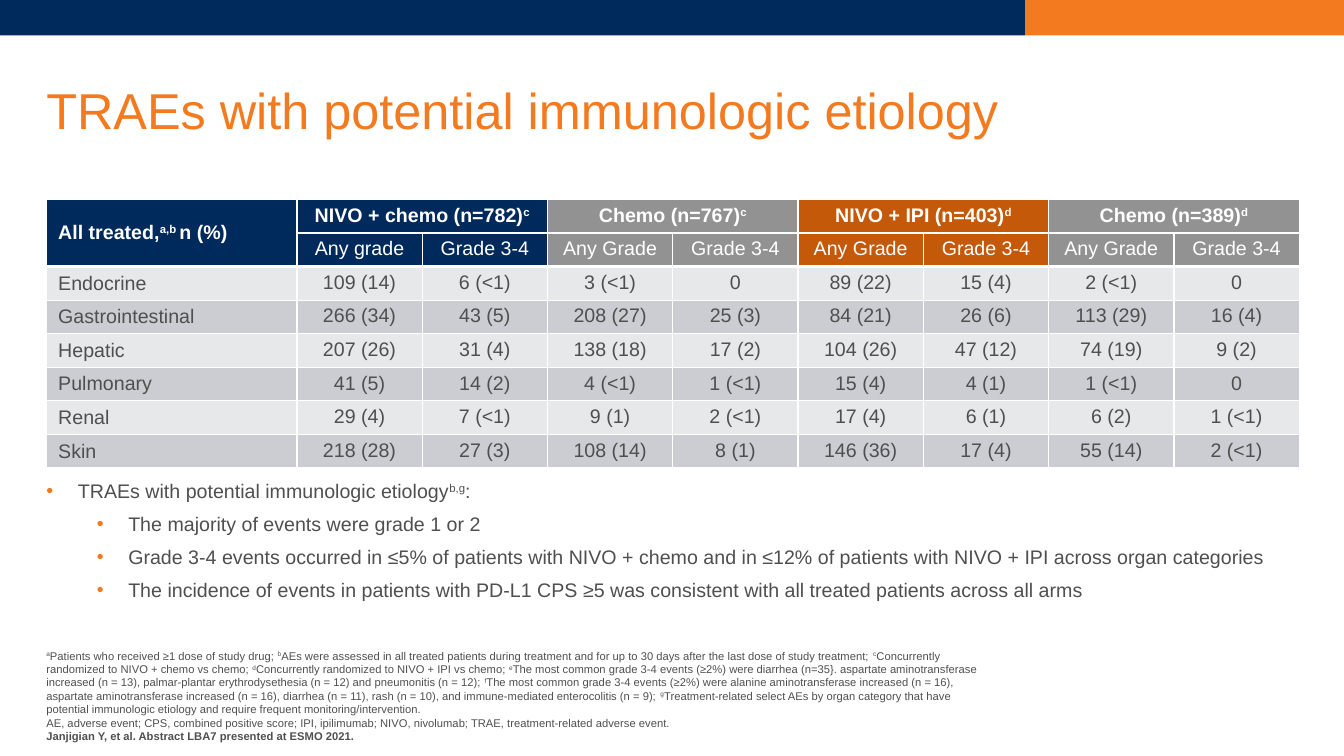
from lxml import etree
from pptx import Presentation
from pptx.dml.color import RGBColor
from pptx.enum.shapes import MSO_SHAPE
from pptx.enum.text import MSO_ANCHOR, MSO_AUTO_SIZE, PP_ALIGN
from pptx.oxml.ns import qn
from pptx.util import Pt

RECT = MSO_SHAPE.RECTANGLE
TOP, MIDDLE, BOTTOM = MSO_ANCHOR.TOP, MSO_ANCHOR.MIDDLE, MSO_ANCHOR.BOTTOM
LEFT, CENTER = PP_ALIGN.LEFT, PP_ALIGN.CENTER
NO_FIT = MSO_AUTO_SIZE.NONE
SUPER_MARK = "^"

THEME = {
    "font": "Arial",
    "navy": "002A5C", "orange": "F47A20", "rust": "C5590A", "gray": "929292",
    "text": "4E4F4E", "white": "FFFFFF", "bands": ("E7E8EA", "CCCDD2"),
    "title": 36, "body": 14, "note": 8,
}

TITLE = "TRAEs with potential immunologic etiology"
CORNER = "All treated,^a,b ^n (%)"
ARMS = [
    ("NIVO + chemo (n=782)^c^", "Any grade", "navy"),
    ("Chemo (n=767)^c^", "Any Grade", "gray"),
    ("NIVO + IPI (n=403)^d^", "Any Grade", "rust"),
    ("Chemo (n=389)^d^", "Any Grade", "gray"),
]
SEVERE = "Grade 3-4"
EVENTS = [
    ("Endocrine", "109 (14)", "6 (<1)", "3 (<1)", "0", "89 (22)", "15 (4)", "2 (<1)", "0"),
    ("Gastrointestinal", "266 (34)", "43 (5)", "208 (27)", "25 (3)", "84 (21)", "26 (6)", "113 (29)", "16 (4)"),
    ("Hepatic", "207 (26)", "31 (4)", "138 (18)", "17 (2)", "104 (26)", "47 (12)", "74 (19)", "9 (2)"),
    ("Pulmonary", "41 (5)", "14 (2)", "4 (<1)", "1 (<1)", "15 (4)", "4 (1)", "1 (<1)", "0"),
    ("Renal", "29 (4)", "7 (<1)", "9 (1)", "2 (<1)", "17 (4)", "6 (1)", "6 (2)", "1 (<1)"),
    ("Skin", "218 (28)", "27 (3)", "108 (14)", "8 (1)", "146 (36)", "17 (4)", "55 (14)", "2 (<1)"),
]
BULLETS = [
    (0, "TRAEs with potential immunologic etiology^b,g^:"),
    (1, "The majority of events were grade 1 or 2"),
    (1, "Grade 3-4 events occurred in ≤5% of patients with NIVO + chemo and in ≤12% of patients "
        "with NIVO + IPI across organ categories"),
    (1, "The incidence of events in patients with PD-L1 CPS ≥5 was consistent with all treated "
        "patients across all arms"),
]
FOOTNOTES = [
    "^a^Patients who received ≥1 dose of study drug;",
    "^b^AEs were assessed in all treated patients during treatment and for up to 30 days after "
    "the last dose of study treatment;",
    "^c^Concurrently randomized to NIVO + chemo vs chemo;",
    "^d^Concurrently randomized to NIVO + IPI vs chemo;",
    "^e^The most common grade 3-4 events (≥2%) were diarrhea (n=35}. aspartate aminotransferase "
    "increased (n = 13), palmar-plantar erythrodysethesia (n = 12) and pneumonitis (n = 12);",
    "^f^The most common grade 3-4 events (≥2%) were alanine aminotransferase increased (n = 16), "
    "aspartate aminotransferase increased (n = 16), diarrhea (n = 11), rash (n = 10), and "
    "immune-mediated enterocolitis (n = 9);",
    "^g^Treatment-related select AEs by organ category that have potential immunologic etiology "
    "and require frequent monitoring/intervention.",
]
ABBREVIATIONS = ("AE, adverse event; CPS, combined positive score; IPI, ipilimumab; "
                 "NIVO, nivolumab; TRAE, treatment-related adverse event.")
CITATION = "Janjigian Y, et al. Abstract LBA7 presented at ESMO 2021."

SLIDE_W, SLIDE_H = 960, 540
MARGIN, CONTENT_W = 33.12, 895
BAR_H, BAR_SPLIT = 25.4, 732.24
LABEL_W, ROW_H = 179, 24
TABLE_TOP = 142.4


def rgb(value):
    return RGBColor.from_string(value)


def add_runs(p, text, size, color, bold=False):
    for i, part in enumerate(text.split(SUPER_MARK)):
        if part:
            r = p.add_run()
            r.text = part
            f = r.font
            f.name, f.size, f.bold = THEME["font"], Pt(size), bold
            f.color.rgb = rgb(color)
            if i % 2:
                r._r.get_or_add_rPr().set("baseline", "30000")


def place(sp, left, top, width, height):
    sp.left, sp.top, sp.width, sp.height = Pt(left), Pt(top), Pt(width), Pt(height)


def set_frame(sp, anchor, pad=0):
    tf = sp.text_frame
    tf.word_wrap, tf.auto_size, tf.vertical_anchor = True, NO_FIT, anchor
    tf.margin_left = tf.margin_right = 0
    tf.margin_top = tf.margin_bottom = Pt(pad)
    return tf


def paragraphs(tf, count):
    return [tf.paragraphs[0]] + [tf.add_paragraph() for _ in range(count - 1)]


def add_bar(s, left, width, color):
    sp = s.shapes.add_shape(RECT, Pt(left), 0, Pt(width), Pt(BAR_H))
    sp.shadow.inherit = False
    sp.fill.solid()
    sp.fill.fore_color.rgb = rgb(color)
    sp.line.fill.background()


def set_bullet(p, level):
    pPr = p._p.get_or_add_pPr()
    pPr.set("marL", str(Pt(22.5 + 36 * level)))
    pPr.set("indent", str(-Pt(22.5)))
    color = etree.SubElement(pPr, qn("a:buClr"))
    etree.SubElement(color, qn("a:srgbClr"), val=THEME["orange"])
    etree.SubElement(pPr, qn("a:buFont"), typeface=THEME["font"])
    etree.SubElement(pPr, qn("a:buChar"), char="•")


def set_borders(cell, top, bottom):
    tcPr = cell._tc.get_or_add_tcPr()
    for i, (side, width) in enumerate((("L", 1), ("R", 1), ("T", top), ("B", bottom))):
        ln = etree.Element(qn("a:ln" + side), w=str(Pt(width)))
        fill = etree.SubElement(ln, qn("a:solidFill"))
        etree.SubElement(fill, qn("a:srgbClr"), val=THEME["white"])
        tcPr.insert(i, ln)


def add_event_table(s):
    header = [CORNER] + [t for arm, _, _ in ARMS for t in (arm, "")]
    grades = [""] + [t for _, grade, _ in ARMS for t in (grade, SEVERE)]
    head_fills = [THEME["navy"]] + [THEME[c] for _, _, c in ARMS for _ in range(2)]
    rows = [header, grades, *EVENTS]
    cols = len(header)
    frame = s.shapes.add_table(len(rows), cols, Pt(MARGIN), Pt(TABLE_TOP),
                               Pt(CONTENT_W), Pt(ROW_H * len(rows)))
    table = frame.table
    table.first_row = table.horz_banding = False
    for c, col in enumerate(table.columns):
        col.width = Pt((CONTENT_W - LABEL_W) / (cols - 1) if c else LABEL_W)
    for row in table.rows:
        row.height = Pt(ROW_H)
    table.cell(0, 0).merge(table.cell(1, 0))
    for c in range(1, cols, 2):
        table.cell(0, c).merge(table.cell(0, c + 1))
    for y, values in enumerate(rows):
        for x, value in enumerate(values):
            cell = table.cell(y, x)
            cell.fill.solid()
            cell.fill.fore_color.rgb = rgb(head_fills[x] if y < 2 else THEME["bands"][y % 2])
            set_borders(cell, 3 if y == 2 else 1, 3 if y == 1 or (x, y) == (0, 0) else 1)
            cell.vertical_anchor = TOP if x else MIDDLE
            cell.margin_left = Pt(7.2 if x else 8.5)
            p = cell.text_frame.paragraphs[0]
            p.alignment = CENTER if x else LEFT
            add_runs(p, value, THEME["body"], THEME["white" if y < 2 else "text"], y == 0)


def main():
    prs = Presentation()
    prs.slide_width, prs.slide_height = Pt(SLIDE_W), Pt(SLIDE_H)
    s = prs.slides.add_slide(prs.slide_layouts[1])
    add_bar(s, 0, BAR_SPLIT, THEME["navy"])
    add_bar(s, BAR_SPLIT, SLIDE_W - BAR_SPLIT, THEME["orange"])

    title, body = s.shapes.title, s.placeholders[1]
    place(title, MARGIN, 28.8, CONTENT_W, 104.4)
    p = set_frame(title, MIDDLE).paragraphs[0]
    p.alignment, p.line_spacing = LEFT, 0.9
    add_runs(p, TITLE, THEME["title"], THEME["orange"])

    add_event_table(s)

    place(body, MARGIN, 337.7, 907.2, 93.6)
    tf = set_frame(body, TOP, 3.6)
    for p, (level, text) in zip(paragraphs(tf, len(BULLETS)), BULLETS):
        p.level, p.line_spacing = level, 1.05
        p.space_before, p.space_after = Pt(0), Pt(6)
        set_bullet(p, level)
        add_runs(p, text, THEME["body"], THEME["text"])

    notes = s.shapes.add_textbox(Pt(MARGIN), Pt(455), Pt(674.6), Pt(75.6))
    tf = set_frame(notes, BOTTOM)
    lines = [" ".join(FOOTNOTES), ABBREVIATIONS, CITATION]
    for p, text in zip(paragraphs(tf, len(lines)), lines):
        add_runs(p, text, THEME["note"], THEME["text"], text == CITATION)
    prs.save("out.pptx")


if __name__ == "__main__":
    main()
